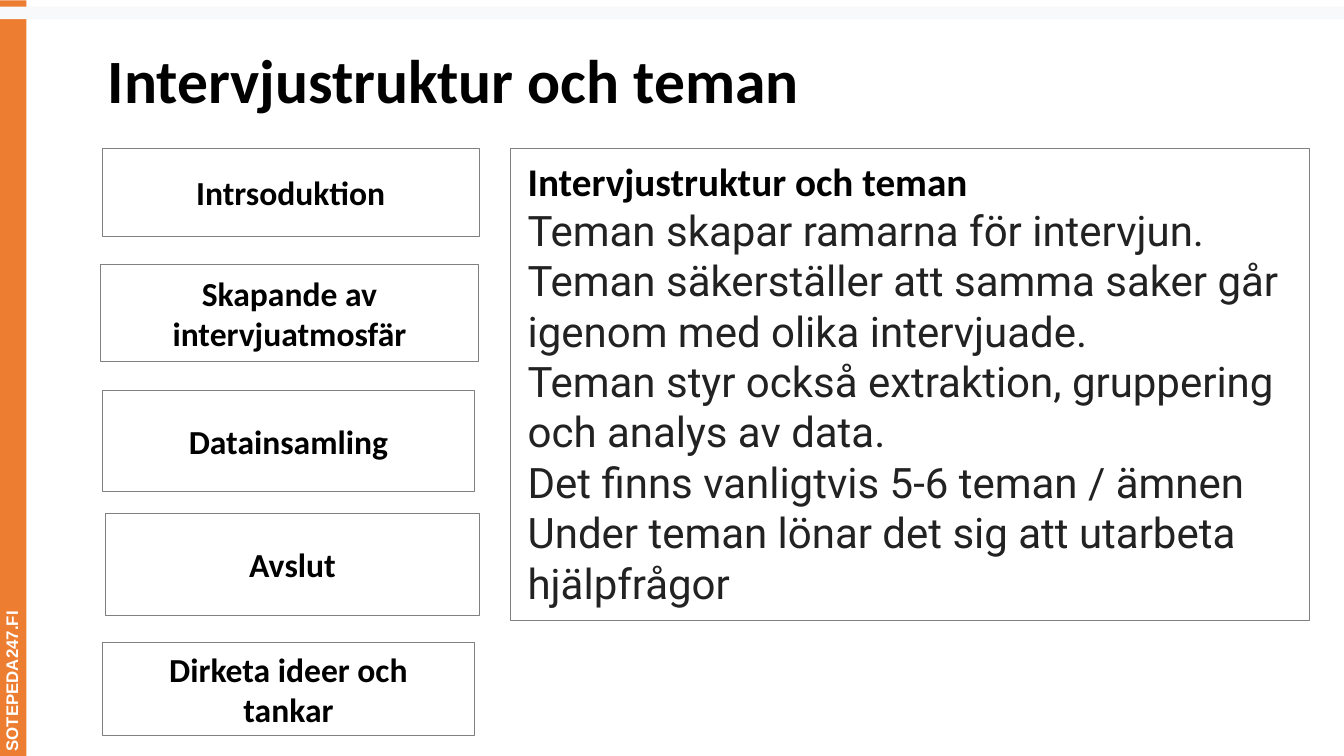
from pptx import Presentation
from pptx.dml.color import RGBColor
from pptx.enum.shapes import MSO_SHAPE
from pptx.enum.text import MSO_ANCHOR, PP_ALIGN
from pptx.util import Inches, Pt

COLORS = {
    "orange": "ED7D31",
    "white": "FFFFFF",
    "black": "000000",
    "ink": "222222",
    "gray": "808080",
    "pale": "F8F9FA",
}

HEAD = "Intervjustruktur och teman"
STEPS = [
    ("Intrsoduktion", (2.03, 2.95, 7.48, 1.74)),
    ("Skapande av intervjuatmosfär", (1.99, 5.25, 7.51, 1.93)),
    ("Datainsamling", (2.03, 7.74, 7.39, 2.01)),
    ("Avslut", (2.1, 10.19, 7.41, 2.01)),
    ("Dirketa ideer och tankar", (2.04, 12.75, 7.37, 1.85)),
]
THEMES = [
    "Teman skapar ramarna för intervjun.",
    "Teman säkerställer att samma saker går igenom med olika intervjuade.",
    "Teman styr också extraktion, gruppering och analys av data.",
    "Det finns vanligtvis 5-6 teman / ämnen Under teman lönar det sig "
    "att utarbeta hjälpfrågor",
]


def tint(name):
    return RGBColor.from_string(COLORS[name])


def add_rect(slide, box, fill, line=None):
    """Add a flat rectangle; line is an outline width in points."""
    rect = slide.shapes.add_shape(MSO_SHAPE.RECTANGLE, *map(Inches, box))
    rect.shadow.inherit = False
    rect.fill.solid()
    rect.fill.fore_color.rgb = tint(fill)
    if line:
        rect.line.color.rgb = tint("gray")
        rect.line.width = Pt(line)
    else:
        rect.line.fill.background()
    return rect


def set_frame(shape, anchor, side, edge):
    """Set wrapping, anchor and insets: side is left/right, edge top/bottom."""
    frame = shape.text_frame
    frame.word_wrap = True
    frame.vertical_anchor = anchor
    frame.margin_left = frame.margin_right = Inches(side)
    frame.margin_top = frame.margin_bottom = Inches(edge)
    return frame


def add_text(frame, text, size, font="Calibri", color="black", bold=True,
             align=PP_ALIGN.LEFT, space=None):
    """Write one paragraph, using the empty first one when there is one."""
    para = frame.paragraphs[0]
    if para.runs:
        para = frame.add_paragraph()
    para.alignment = align
    para.line_spacing = space
    run = para.add_run()
    run.text = text
    run.font.size = Pt(size)
    run.font.name = font
    run.font.bold = bold
    run.font.color.rgb = tint(color)


def add_side(slide):
    bar = add_rect(slide, (-7.28, 7.2, 15, 0.61), "orange")
    bar.rotation = 270
    frame = set_frame(bar, MSO_ANCHOR.BOTTOM, 0.1, 0.1)
    add_text(frame, "SOTEPEDA247.FI", 24, font="Arial", color="white")


def add_title(slide):
    box = slide.shapes.add_textbox(*map(Inches, (2.04, 0.62, 24.31, 2.09)))
    frame = set_frame(box, MSO_ANCHOR.MIDDLE, 0.1, 0.1)
    add_text(frame, HEAD, 88, space=0.9)


def add_panel(slide):
    panel = add_rect(slide, (10.12, 2.94, 15.87, 9.37), "white", 0.75)
    frame = set_frame(panel, MSO_ANCHOR.TOP, 0.35, 0.18)
    add_text(frame, HEAD, 56)
    for theme in THEMES:
        add_text(frame, theme, 60, font="Roboto", color="ink", bold=False)


def add_step(slide, text, box):
    step = add_rect(slide, box, "white", 1)
    frame = set_frame(step, MSO_ANCHOR.MIDDLE, 0.35, 0.18)
    add_text(frame, text, 48, align=PP_ALIGN.CENTER)


def main():
    deck = Presentation()
    deck.slide_width, deck.slide_height = Inches(26.67), Inches(15)
    slide = deck.slides.add_slide(deck.slide_layouts[6])
    add_side(slide)
    add_title(slide)
    add_panel(slide)
    for text, box in STEPS:
        add_step(slide, text, box)
    add_rect(slide, (0, 0.13, 26.67, 0.25), "pale")
    deck.save("out.pptx")


if __name__ == "__main__":
    main()
